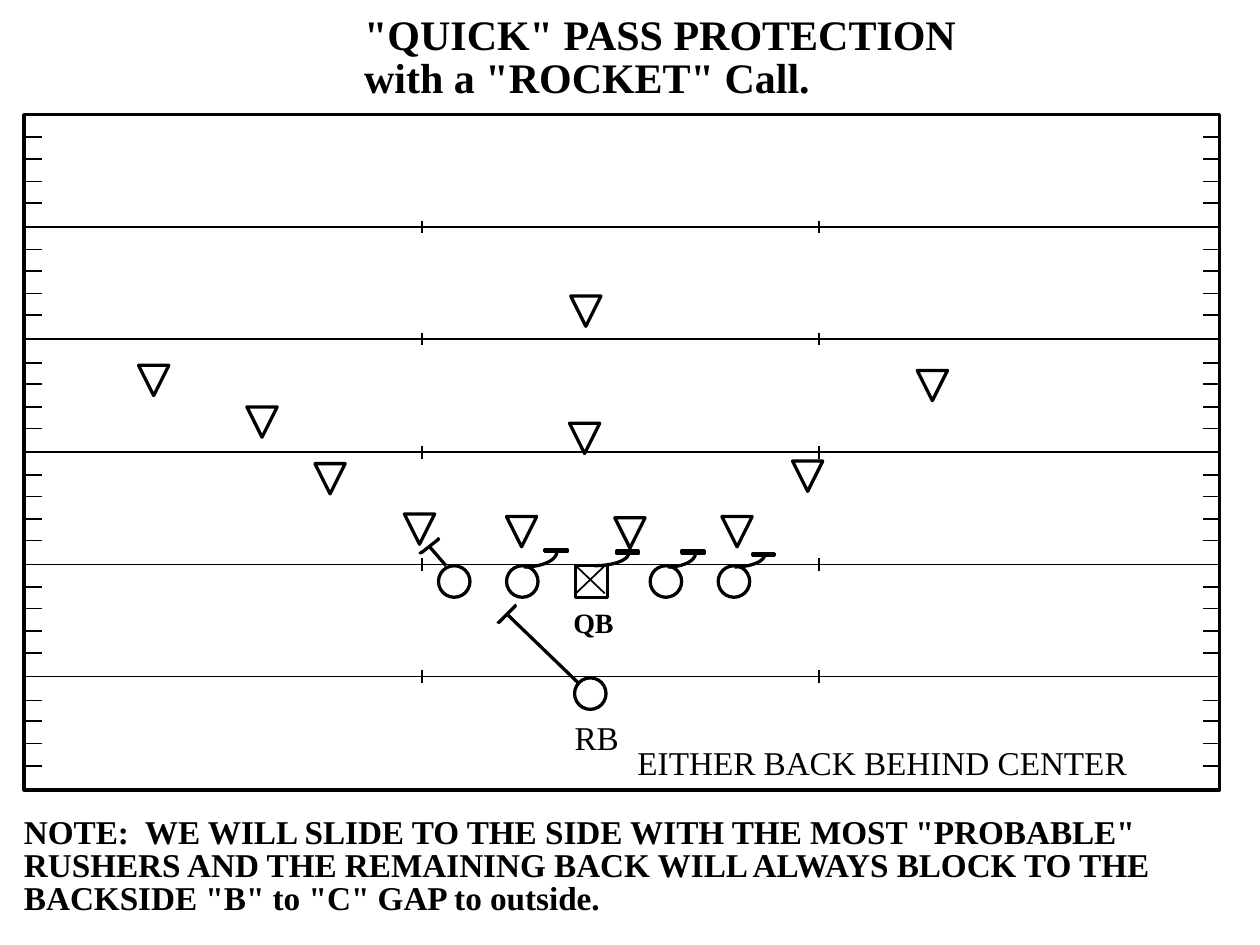
from dataclasses import dataclass
from math import cos, pi, sin

from pptx import Presentation
from pptx.dml.color import RGBColor
from pptx.enum.shapes import MSO_CONNECTOR, MSO_SHAPE
from pptx.enum.text import MSO_AUTO_SIZE
from pptx.oxml.ns import qn
from pptx.util import Pt

RECT, OVAL = MSO_SHAPE.RECTANGLE, MSO_SHAPE.OVAL
STRAIGHT = MSO_CONNECTOR.STRAIGHT
FIT_SHAPE = MSO_AUTO_SIZE.SHAPE_TO_FIT_TEXT
LEFT_SIDE, RIGHT_SIDE = 1, 3
PX = 9144  # EMU per px, 100 px to the inch


@dataclass(frozen=True)
class Theme:
    ink: RGBColor = RGBColor(0, 0, 0)
    paper: RGBColor = RGBColor(255, 255, 255)
    font: str = "Times New Roman"
    title: int = 24
    body: int = 19
    label: int = 16
    thin: float = 1
    thick: float = 1.88


@dataclass(frozen=True)
class Label:
    x: int
    y: int
    w: int
    h: int
    text: str
    size: int
    bold: bool = True


@dataclass(frozen=True)
class Slide_block:
    """A lineman's curved step, from (x, y) down-left, capped by a bar."""
    x: int
    y: int
    w: int
    h: int
    bar_x: int
    bar_y: int


@dataclass(frozen=True)
class Drive_block:
    """A straight block with a slanted bar at its end."""
    start: tuple[int, int]
    end: tuple[int, int]
    bar: tuple[tuple[int, int], ...]


THEME = Theme()

# Field geometry
FIELD = (19, 91, 949, 536)
YARD_LINES, YARD_TOP, YARD_GAP = 5, 180, 89.3
HASH_X, HASH_HALF = (335, 650), 5
TICK_X, TICK_LEN, TICK_TOPS = (21, 955), 12, (109, 126, 144, 161)

# Players
SIZE = 25
TRIANGLE = 24
LINEMEN = [(348, 449), (402, 449), (516, 449), (570, 449)]
RUNNING_BACK = (456, 538)
CENTER = (457, 449)
DEFENDERS = [
    (321, 408), (402, 410), (488, 411), (573, 410),
    (250, 368), (452, 336), (629, 366),
    (110, 290), (196, 323), (728, 294), (453, 235),
]

# Blocks
SLIDE_BLOCKS = [
    Slide_block(416, 438, 26, 12, 432, 436),
    Slide_block(472, 439, 27, 10, 489, 437),
    Slide_block(530, 439, 22, 11, 541, 437),
    Slide_block(583, 440, 24, 10, 597, 439),
]
DRIVE_BLOCKS = [
    Drive_block((460, 543), (403, 488),
                ((408, 480), (409, 481), (396, 494), (395, 493))),
    Drive_block((354, 449), (341, 434),
                ((347, 427), (348, 428), (334, 439), (333, 438))),
]

LABELS = [
    Label(289, 7, 516, 46, '"QUICK" PASS PROTECTION', THEME.title),
    Label(289, 41, 384, 46, 'with a "ROCKET" Call.', THEME.title),
    Label(506, 589, 420, 37, "EITHER BACK BEHIND CENTER", THEME.body, False),
    Label(456, 569, 48, 37, "RB", THEME.body, False),
    Label(455, 481, 41, 30, "QB", THEME.label),
    Label(19, 644, 953, 37,
          'NOTE:  WE WILL SLIDE TO THE SIDE WITH THE MOST "PROBABLE"',
          THEME.body),
    Label(19, 670, 975, 37,
          "RUSHERS AND THE REMAINING BACK WILL ALWAYS BLOCK TO THE",
          THEME.body),
    Label(19, 696, 495, 37, 'BACKSIDE "B" to "C" GAP to outside.', THEME.body),
]


def style(sp, filled: bool) -> None:
    sp.shadow.inherit = False
    if filled:
        sp.fill.solid()
        sp.fill.fore_color.rgb = THEME.paper
    else:
        sp.fill.background()
    sp.line.color.rgb = THEME.ink
    sp.line.width = Pt(THEME.thick)


def add_preset(s, kind, x: int, y: int, w: int, h: int, filled: bool = True):
    sp = s.shapes.add_shape(kind, x * PX, y * PX, w * PX, h * PX)
    style(sp, filled)
    return sp


def add_line(s, x1: int, y1: int, x2: int, y2: int, width: float = THEME.thin):
    cxn = s.shapes.add_connector(STRAIGHT, x1 * PX, y1 * PX, x2 * PX, y2 * PX)
    cxn.line.color.rgb = THEME.ink
    cxn.line.width = Pt(width)
    sp_pr = cxn._element.spPr
    sp_pr.append(sp_pr.makeelement(qn("a:effectLst"), {}))
    return cxn


def add_path(s, points, closed: bool = False) -> None:
    emu = [(round(x * PX), round(y * PX)) for x, y in points]
    fb = s.shapes.build_freeform(*emu[0])
    fb.add_line_segments(emu[1:], close=closed)
    style(fb.convert_to_shape(), filled=closed)


def add_defender(s, x: int, y: int) -> None:
    add_path(s, [(x, y), (x + TRIANGLE, y), (x + TRIANGLE / 2, y + TRIANGLE)],
             closed=True)


def add_slide_block(s, b: Slide_block, steps: int = 16) -> None:
    angles = [pi / 2 * (1 - i / steps) for i in range(steps + 1)]
    add_path(s, [(b.x + b.w * sin(a), b.y + b.h * cos(a)) for a in angles])
    add_preset(s, RECT, b.bar_x, b.bar_y, 18, 2, filled=False)


def add_drive_block(s, b: Drive_block) -> None:
    add_line(s, *b.start, *b.end, THEME.thick)
    add_path(s, b.bar)


def add_label(s, lb: Label) -> None:
    tb = s.shapes.add_textbox(lb.x * PX, lb.y * PX, lb.w * PX, lb.h * PX)
    tf = tb.text_frame
    tf.margin_left = tf.margin_right = tf.margin_top = tf.margin_bottom = 0
    tf.word_wrap = False
    tf.auto_size = FIT_SHAPE
    tf.text = lb.text
    font = tf.paragraphs[0].runs[0].font
    font.name, font.size, font.bold = THEME.font, Pt(lb.size), lb.bold
    font.color.rgb = THEME.ink


def add_field(s) -> None:
    field = add_preset(s, RECT, *FIELD, filled=False)
    left, right = FIELD[0], FIELD[0] + FIELD[2]
    # Sideline ticks, four in each band
    for band in range(YARD_LINES + 1):
        for top in TICK_TOPS:
            y = round(top + band * YARD_GAP)
            for x in TICK_X:
                add_line(s, x, y, x + TICK_LEN, y)
    # Yard lines with hash marks
    for i in range(YARD_LINES):
        y = round(YARD_TOP + i * YARD_GAP)
        yard = add_line(s, left, y, right, y)
        if i == YARD_LINES // 2:
            yard.begin_connect(field, LEFT_SIDE)
            yard.end_connect(field, RIGHT_SIDE)
        for x in HASH_X:
            add_line(s, x, y - HASH_HALF, x, y + HASH_HALF)


def main() -> None:
    prs = Presentation()
    prs.slide_width, prs.slide_height = 1000 * PX, 750 * PX
    s = prs.slides.add_slide(prs.slide_layouts[6])
    add_field(s)
    for lb in LABELS:
        add_label(s, lb)
    # Players
    for x, y in DEFENDERS:
        add_defender(s, x, y)
    for x, y in [*LINEMEN, RUNNING_BACK]:
        add_preset(s, OVAL, x, y, SIZE, SIZE)
    x, y = CENTER
    add_preset(s, RECT, x, y, SIZE, SIZE)
    add_line(s, x, y, x + 23, y + 22)
    add_line(s, x, y + 22, x + 23, y)
    # Blocking assignments
    for b in DRIVE_BLOCKS:
        add_drive_block(s, b)
    for b in SLIDE_BLOCKS:
        add_slide_block(s, b)
    prs.save("out.pptx")


if __name__ == "__main__":
    main()
